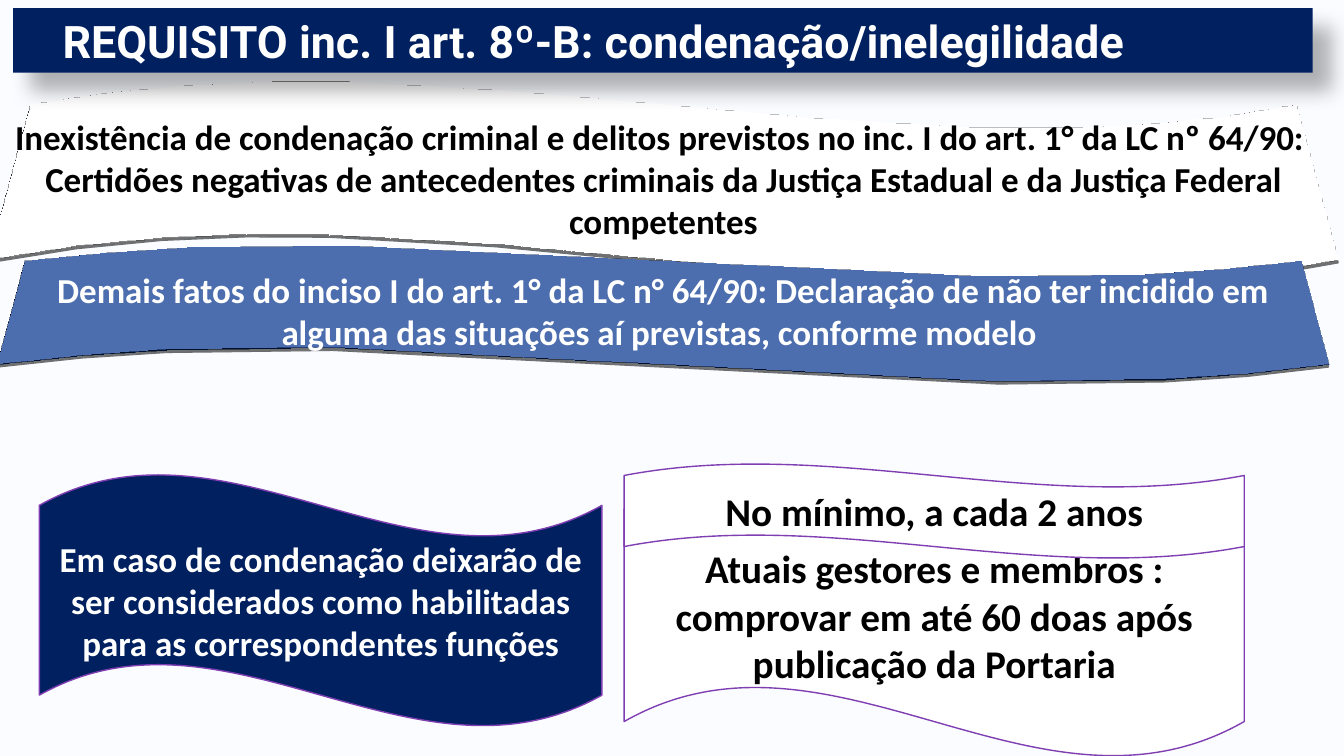
from lxml.etree import fromstring
from pptx import Presentation
from pptx.dml.color import RGBColor
from pptx.enum.shapes import MSO_SHAPE
from pptx.enum.text import MSO_ANCHOR, PP_ALIGN
from pptx.util import Inches, Pt

NAMESPACE = 'xmlns:a="http://schemas.openxmlformats.org/drawingml/2006/main"'
NAVY, WHITE, BLACK, PURPLE = "002060", "FFFFFF", "000000", "7F3EB2"


def colour(value):
    return RGBColor.from_string(value)


def write_text(frame, *lines, size=25, font="Calibri", color=WHITE, align=PP_ALIGN.CENTER):
    frame.word_wrap = True
    frame.vertical_anchor = MSO_ANCHOR.MIDDLE
    for index, line in enumerate(lines):
        paragraph = frame.add_paragraph() if index else frame.paragraphs[0]
        paragraph.alignment = align
        run = paragraph.add_run()
        run.text = line
        run.font.size = Pt(size)
        run.font.name = font
        run.font.bold = True
        run.font.color.rgb = colour(color)


class RequirementSlide:
    def __init__(self, presentation, background):
        self.slide = presentation.slides.add_slide(presentation.slide_layouts[5])
        self.slide.background.fill.solid()
        self.slide.background.fill.fore_color.rgb = colour(background)

    def shadow(self, shape, alpha, blur, distance, angle):
        shape._element.spPr.append(fromstring(
            f'<a:effectLst {NAMESPACE}><a:outerShdw blurRad="{Pt(blur)}" dist="{Pt(distance)}" '
            f'dir="{angle * 60000}" algn="tl" rotWithShape="0"><a:srgbClr val="{BLACK}">'
            f'<a:alpha val="{alpha * 1000}"/></a:srgbClr></a:outerShdw></a:effectLst>'))

    def title(self, text, left, top, width, height):
        shape = self.slide.shapes.title
        shape.left, shape.top, shape.width, shape.height = map(Inches, (left, top, width, height))
        shape.fill.solid()
        shape.fill.fore_color.rgb = colour(NAVY)
        write_text(shape.text_frame, text, size=32, font="Roboto", align=PP_ALIGN.LEFT)
        shape.text_frame.paragraphs[0]._p.get_or_add_pPr().set("marL", str(Inches(0.39)))
        self.shadow(shape, 30, 15, 18, 45)
        self.slide.shapes._spTree.append(shape._element)

    def wave(self, *lines, box, fill, line=None, **text_format):
        shape = self.slide.shapes.add_shape(MSO_SHAPE.WAVE, *map(Inches, box))
        shape.fill.solid()
        shape.fill.fore_color.rgb = colour(fill)
        if line:
            shape.line.color.rgb = colour(line)
            shape.line.width = Pt(1)
            shape.shadow.inherit = False
        else:
            shape.line.fill.background()
        frame = shape.text_frame
        frame.margin_left = frame.margin_right = frame.margin_top = frame.margin_bottom = 0
        write_text(frame, *lines, **text_format)
        return shape

    def tilted_wave(self, *lines, **options):
        shape = self.wave(*lines, **options)
        self.shadow(shape, 32, 3.5, 2.2, 90)
        for part in (
            f'<a:scene3d {NAMESPACE}><a:camera prst="perspectiveRelaxedModerately"/>'
            '<a:lightRig rig="threePt" dir="t"/></a:scene3d>',
            f'<a:sp3d {NAMESPACE} extrusionH="12700"/>',
        ):
            shape._element.spPr.append(fromstring(part))


def main():
    presentation = Presentation()
    presentation.slide_width = Inches(13.33)
    presentation.slide_height = Inches(7.5)
    page = RequirementSlide(presentation, "FAFCFF")

    page.tilted_wave(
        "Inexistência de condenação criminal e delitos previstos no inc. I do art. 1° da LC nº 64/90: ",
        "Certidões negativas de antecedentes criminais da Justiça Estadual e da Justiça Federal competentes",
        box=(0.13, 0.52, 12.9, 2.51), fill=WHITE, color=BLACK)
    page.title("REQUISITO inc. I art. 8º-B: condenação/inelegilidade", 0.13, 0.08, 12.89, 0.64)
    page.tilted_wave(
        "Demais fatos do inciso I do art. 1° da LC n° 64/90: Declaração de não ter incidido em "
        "alguma das situações aí previstas, conforme modelo ",
        box=(0.13, 2.25, 12.89, 1.67), fill=NAVY)
    page.wave(
        "Atuais gestores e membros : comprovar em até 60 doas após publicação da Portaria",
        box=(6.19, 4.7, 6.15, 2.81), fill=WHITE, line=PURPLE, size=28, color=BLACK)
    page.wave(
        "Em caso de condenação deixarão de ser considerados como habilitadas "
        "para as correspondentes funções",
        box=(0.39, 4.7, 5.58, 2.51), fill=NAVY, line=PURPLE)
    page.wave(
        "No mínimo, a cada 2 anos",
        box=(6.19, 4.6, 6.15, 0.94), fill=WHITE, line=PURPLE, size=28, color=BLACK)

    presentation.save("out.pptx")


if __name__ == "__main__":
    main()
